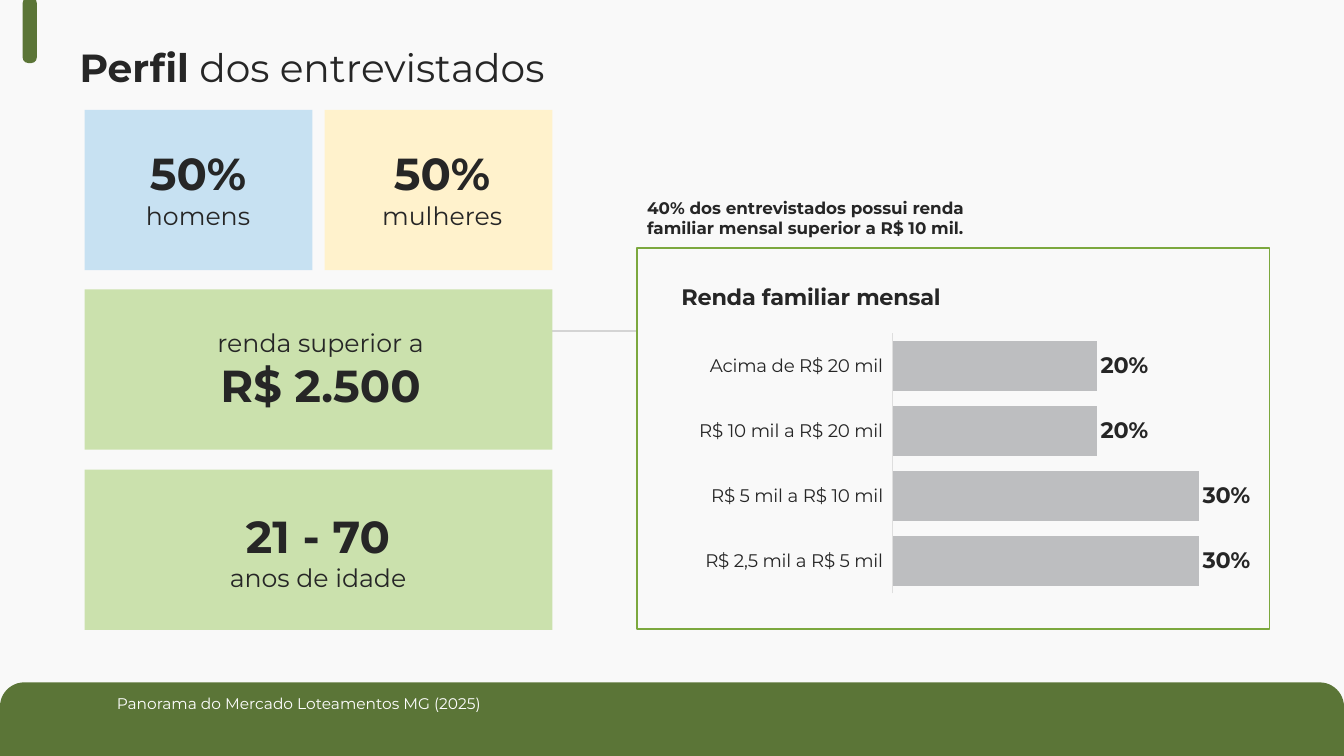
from dataclasses import dataclass

from lxml import etree
from pptx import Presentation
from pptx.chart.data import CategoryChartData
from pptx.dml.color import RGBColor
from pptx.enum.chart import XL_CHART_TYPE as ChartType
from pptx.enum.chart import XL_LABEL_POSITION as LabelPosition
from pptx.enum.chart import XL_TICK_LABEL_POSITION as TickLabels
from pptx.enum.chart import XL_TICK_MARK as TickMark
from pptx.enum.shapes import MSO_CONNECTOR as Connector
from pptx.enum.shapes import MSO_SHAPE as Shape
from pptx.enum.text import MSO_ANCHOR as Anchor
from pptx.enum.text import PP_ALIGN as Align
from pptx.oxml import parse_xml
from pptx.oxml.ns import nsdecls, qn
from pptx.util import Inches, Pt


@dataclass(frozen=True)
class Theme:
    font: str = "Montserrat"
    background: str = "F9F9F9"
    ink: str = "262626"
    white: str = "FFFFFF"
    dark_green: str = "5B7537"
    frame_green: str = "7CA83E"
    light_green: str = "CBE1AD"
    blue: str = "C7E1F2"
    yellow: str = "FFF2CC"
    bar: str = "BDBEC0"
    axis: str = "DEDEDE"
    link: str = "D4D4D4"
    title: int = 28
    figure: int = 32
    caption: int = 18
    chart_title: int = 16
    category: int = 13
    note: int = 12
    footer: int = 11


theme = Theme()


def style(font, size, bold=False, color=theme.ink):
    font.name = theme.font
    font.size = Pt(size)
    font.bold = bold
    font.color.rgb = RGBColor.from_string(color)


def add_block(kind, left, top, width, height, color):
    shape = slide.shapes.add_shape(kind, Inches(left), Inches(top), Inches(width), Inches(height))
    shape.shadow.inherit = False
    shape.fill.solid()
    shape.fill.fore_color.rgb = RGBColor.from_string(color)
    shape.line.fill.background()
    return shape


presentation = Presentation()
presentation.slide_width = Inches(13.33)
presentation.slide_height = Inches(7.5)
slide = presentation.slides.add_slide(presentation.slide_layouts[6])
slide.background.fill.solid()
slide.background.fill.fore_color.rgb = RGBColor.from_string(theme.background)

footer_band = add_block(Shape.ROUND_2_SAME_RECTANGLE, 0, 6.77, 13.33, 0.73, theme.dark_green)
footer_band.adjustments[0] = 0.33

link = slide.shapes.add_connector(
    Connector.STRAIGHT, Inches(4.8), Inches(3.28), Inches(6.32), Inches(3.28))
link.line.color.rgb = RGBColor.from_string(theme.link)
link.line.width = Pt(1.5)
etree.SubElement(link._element.spPr, qn("a:effectLst"))

cards = [
    (0.84, 1.09, 2.26, theme.blue),
    (3.22, 1.09, 2.26, theme.yellow),
    (0.84, 2.87, 4.64, theme.light_green),
    (0.84, 4.66, 4.64, theme.light_green),
]
for left, top, width, color in cards:
    add_block(Shape.RECTANGLE, left, top, width, 1.59, color)

income_data = CategoryChartData(number_format="0%")
income_data.categories = [
    "Acima de R$ 20 mil", "R$ 10 mil a R$ 20 mil", "R$ 5 mil a R$ 10 mil", "R$ 2,5 mil a R$ 5 mil"]
income_data.add_series("Series 1", [0.2, 0.2, 0.3, 0.3])
chart = slide.shapes.add_chart(
    ChartType.BAR_CLUSTERED, Inches(6.05), Inches(2.62), Inches(6.68), Inches(3.44),
    income_data).chart
style(chart.font, theme.category)
chart.has_legend = False
chart.has_title = True
title_frame = chart.chart_title.text_frame
title_frame.text = "Renda familiar mensal"
style(title_frame.paragraphs[0].runs[0].font, theme.chart_title, True)

category_axis = chart.category_axis
category_axis.reverse_order = True
category_axis.major_tick_mark = TickMark.NONE
category_axis.minor_tick_mark = TickMark.NONE
category_axis.tick_label_position = TickLabels.LOW
style(category_axis.tick_labels.font, theme.category)
category_axis.format.line.color.rgb = RGBColor.from_string(theme.axis)
category_axis.format.line.width = Pt(0.75)

value_axis = chart.value_axis
value_axis.minimum_scale = 0
value_axis.maximum_scale = 0.35
value_axis.has_major_gridlines = False
value_axis.visible = False

plot = chart.plots[0]
plot.gap_width = 30
plot.overlap = 100
plot.vary_by_categories = False
income_series = plot.series[0]
income_series.format.fill.solid()
income_series.format.fill.fore_color.rgb = RGBColor.from_string(theme.bar)
labels = income_series.data_labels
labels.show_value = True
labels.number_format = "0%"
labels.number_format_is_linked = False
labels.position = LabelPosition.OUTSIDE_END
style(labels.font, theme.chart_title, True)

title_layout = {"xMode": "edge", "yMode": "edge", "x": 0.1, "y": 0.04}
plot_layout = {"layoutTarget": "inner", "xMode": "edge", "yMode": "edge",
               "x": 0.42, "y": 0.2, "w": 0.53, "h": 0.75}
chart_parts = [
    (chart.chart_title._element, title_layout),
    (chart._chartSpace.chart.plotArea, plot_layout),
]
for part, settings in chart_parts:
    for old_layout in part.findall(qn("c:layout")):
        part.remove(old_layout)
    values = "".join(f'<c:{name} val="{value}"/>' for name, value in settings.items())
    layout = parse_xml(
        f'<c:layout {nsdecls("c")}><c:manualLayout>{values}</c:manualLayout></c:layout>')
    text = part.find(qn("c:tx"))
    part.insert(0 if text is None else 1, layout)

frame = add_block(Shape.RECTANGLE, 6.32, 2.46, 6.27, 3.78, theme.background)
frame.fill.background()
frame.line.color.rgb = RGBColor.from_string(theme.frame_green)
frame.line.width = Pt(1)

figure = (theme.figure, True, theme.ink)
caption = (theme.caption, False, theme.ink)
texts = [
    (0.69, 0.3, 5.21, 0.79, Align.LEFT, [
        [("Perfil", (theme.title, True, theme.ink)),
         (" dos entrevistados", (theme.title, False, theme.ink))]]),
    (1.2, 1.4, 1.53, 0.98, Align.CENTER, [[("50%", figure)], [("homens", caption)]]),
    (3.58, 1.4, 1.61, 0.98, Align.CENTER, [[("50%", figure)], [("mulheres", caption)]]),
    (1.97, 3.2, 2.42, 0.94, Align.CENTER, [[("renda superior a", caption)], [("R$ 2.500", figure)]]),
    (2.07, 5, 2.17, 0.98, Align.CENTER, [[("21 - 70", figure)], [("anos de idade", caption)]]),
    (6.32, 1.91, 3.46, 0.5, Align.LEFT, [
        [("40% dos entrevistados possui renda familiar mensal superior a R$ 10 mil.",
          (theme.note, True, theme.ink))]]),
    (1.06, 6.84, 7.02, 0.29, Align.LEFT, [
        [("Panorama do Mercado Loteamentos MG (2025)", (theme.footer, False, theme.white))]]),
]
for left, top, width, height, alignment, paragraphs in texts:
    box = slide.shapes.add_textbox(Inches(left), Inches(top), Inches(width), Inches(height))
    text_frame = box.text_frame
    text_frame.word_wrap = True
    for index, runs in enumerate(paragraphs):
        paragraph = text_frame.paragraphs[0] if index == 0 else text_frame.add_paragraph()
        paragraph.alignment = alignment
        for content, look in runs:
            run = paragraph.add_run()
            run.text = content
            style(run.font, *look)

heading = next(shape for shape in slide.shapes
               if shape.has_text_frame and shape.text_frame.text.startswith("Perfil"))
heading.text_frame.vertical_anchor = Anchor.MIDDLE
heading.text_frame.paragraphs[0].line_spacing = 0.9

accent = add_block(Shape.ROUNDED_RECTANGLE, -0.03, 0.23, 0.65, 0.14, theme.dark_green)
accent.rotation = 270
accent.adjustments[0] = 0.39

presentation.save("out.pptx")
